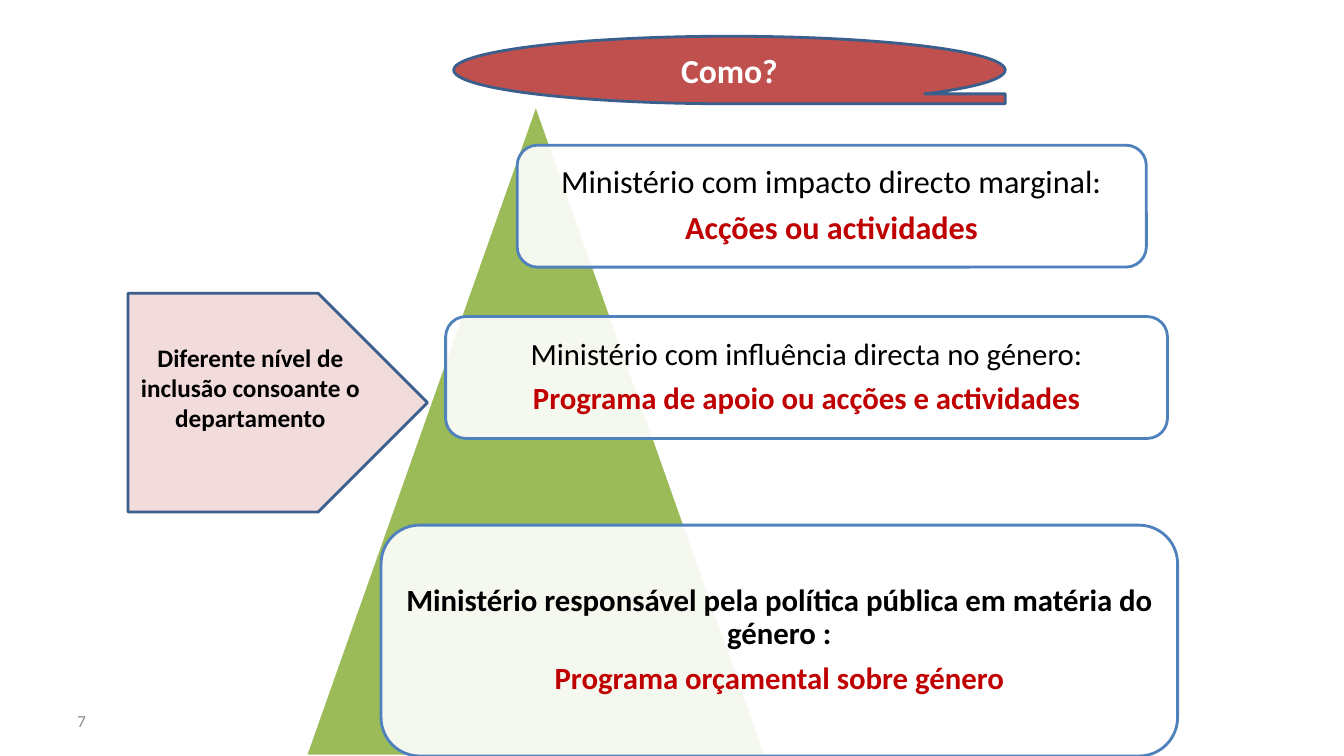
from lxml import etree
from pptx import Presentation
from pptx.dml.color import RGBColor
from pptx.enum.shapes import MSO_SHAPE
from pptx.enum.text import MSO_ANCHOR, PP_ALIGN
from pptx.oxml.ns import qn
from pptx.util import Inches, Pt

WIDE, HIGH = 13.33, 7.5
BLANK = 6
FONT = "Calibri"
MIDDLE = MSO_ANCHOR.MIDDLE
CENTER, LEFT = PP_ALIGN.CENTER, PP_ALIGN.LEFT
TRIANGLE, ROUND = MSO_SHAPE.ISOSCELES_TRIANGLE, MSO_SHAPE.ROUNDED_RECTANGLE
ARROW = MSO_SHAPE.PENTAGON
TAPE = MSO_SHAPE.FLOWCHART_SEQUENTIAL_ACCESS_STORAGE

WHITE = RGBColor(0xFF, 0xFF, 0xFF)
BLACK = RGBColor(0, 0, 0)
GREEN = RGBColor(0x9B, 0xBB, 0x59)
BLUE = RGBColor(0x4F, 0x81, 0xBD)
NAVY = RGBColor(0x3A, 0x5F, 0x8C)
BRICK = RGBColor(0xC0, 0x50, 0x4D)
ROSE = RGBColor(0xF2, 0xDC, 0xDB)
RED = RGBColor(0xC0, 0, 0)
GREY = RGBColor(0x8C, 0x8C, 0x8C)

# Each level: box, text size, bold heading, heading, means
LEVELS = [
    ((5.13, 1.44, 6.24, 1.21), 23, False,
     "Ministério com impacto directo marginal:", "Acções ou actividades"),
    ((4.42, 3.14, 7.16, 1.21), 22, False,
     "Ministério com influência directa no género:",
     "Programa de apoio ou acções e actividades"),
    ((3.78, 5.21, 7.9, 2.29), 22, True,
     "Ministério responsável pela política pública em matéria do género :",
     "Programa orçamental sobre género"),
]


def add_form(slide, kind, box, fill, line):
    form = slide.shapes.add_shape(kind, *map(Inches, box))
    form.shadow.inherit = False
    form.fill.solid()
    form.fill.fore_color.rgb = fill
    form.line.color.rgb = line
    form.line.width = Pt(2)
    return form


def write(para, text, size, color, bold=False, align=CENTER):
    para.text = text
    para.alignment = align
    font = para.font
    font.name, font.size, font.bold = FONT, Pt(size), bold
    font.color.rgb = color


def fade(form, share):
    """Make the solid fill opaque to the given percentage."""
    tone = form.fill._xPr.find(qn("a:solidFill"))[0]
    etree.SubElement(tone, qn("a:alpha")).set("val", str(share * 1000))


def add_label(slide, kind, box, fill, text, size, color):
    form = add_form(slide, kind, box, fill, NAVY)
    frame = form.text_frame
    frame.vertical_anchor = MIDDLE
    write(frame.paragraphs[0], text, size, color, True)
    return form


def add_level(slide, box, size, bold, head, means):
    card = add_form(slide, ROUND, box, WHITE, BLUE)
    fade(card, 90)
    frame = card.text_frame
    frame.vertical_anchor = MIDDLE
    frame.margin_left = frame.margin_right = Inches(0.09)
    frame.margin_top = frame.margin_bottom = Inches(0.09)
    write(frame.paragraphs[0], head, size, BLACK, bold)
    write(frame.add_paragraph(), means, size, RED, True)
    for para in frame.paragraphs:
        para.line_spacing = 0.9
        para.space_after = Pt(round(size * 0.35))


def add_pyramid(slide, box):
    add_form(slide, TRIANGLE, box, GREEN, WHITE)
    for level in LEVELS:
        add_level(slide, *level)


def add_number(slide, box, text):
    frame = slide.shapes.add_textbox(*map(Inches, box)).text_frame
    frame.word_wrap = True
    frame.vertical_anchor = MIDDLE
    write(frame.paragraphs[0], text, 12, GREY, align=LEFT)


def main():
    deck = Presentation()
    deck.slide_width, deck.slide_height = Inches(WIDE), Inches(HIGH)
    slide = deck.slides.add_slide(deck.slide_layouts[BLANK])
    add_pyramid(slide, (3.03, 1.03, 4.57, 6.47))
    add_number(slide, (0.67, 6.95, 3.11, 0.4), "7")
    add_label(slide, TAPE, (4.5, 0.36, 5.47, 0.67), BRICK, "Como?", 24, WHITE)
    arrow = add_label(slide, ARROW, (1.27, 2.91, 2.97, 2.17), ROSE,
                      "Diferente nível de inclusão consoante o departamento",
                      18, BLACK)
    arrow.text_frame.margin_bottom = Inches(0.35)
    deck.save("out.pptx")


if __name__ == "__main__":
    main()
